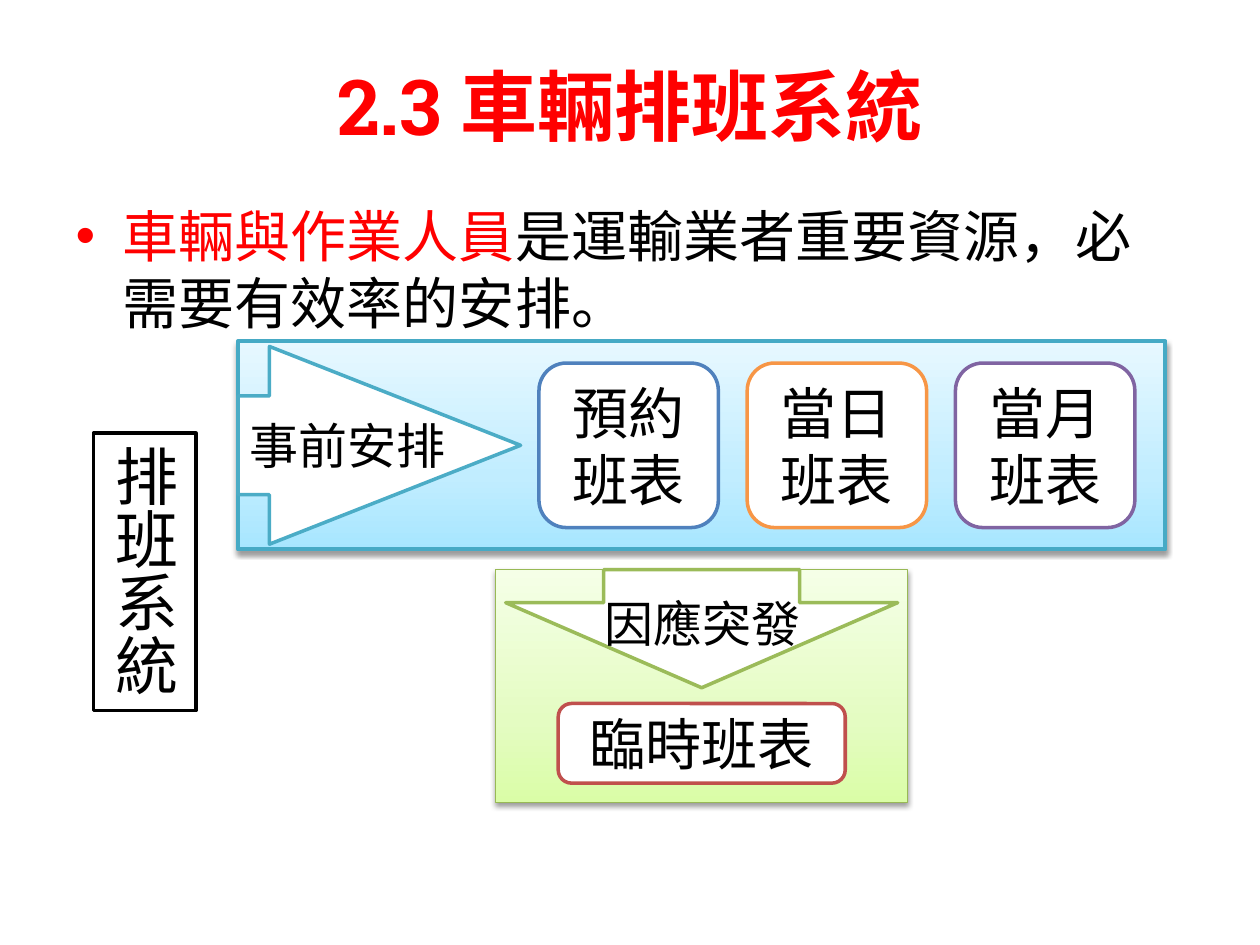
from dataclasses import dataclass

from lxml.etree import SubElement
from pptx import Presentation
from pptx.dml.color import RGBColor
from pptx.enum.shapes import MSO_SHAPE
from pptx.enum.text import MSO_ANCHOR, PP_ALIGN
from pptx.oxml import parse_xml
from pptx.oxml.ns import nsdecls, qn
from pptx.shapes.autoshape import Shape
from pptx.text.text import TextFrame
from pptx.util import Pt


@dataclass(frozen=True)
class Theme:
    font: str = "Roboto Slab"
    ink: str = "000000"
    paper: str = "FFFFFF"
    accent: str = "FF0000"
    blue: str = "4F81BD"
    orange: str = "F79646"
    purple: str = "8064A2"
    red: str = "C0504D"
    aqua: str = "4BACC6"
    green: str = "9BBB59"
    aqua_edge: str = "46AAC5"
    green_edge: str = "98B955"
    aqua_gradient: tuple = ("A7E6FF", "C1EDFF", "E7F8FF")
    green_gradient: tuple = ("DAFDA7", "E4FCC2", "F5FFE7")
    title_size: int = 44
    system_size: int = 36
    body_size: int = 32
    label_size: int = 28
    outline: float = 2


@dataclass(frozen=True)
class Box:
    left: float
    top: float
    width: float
    height: float

    def lengths(self) -> tuple:
        return Pt(self.left), Pt(self.top), Pt(self.width), Pt(self.height)


@dataclass(frozen=True)
class Card:
    box: Box
    lines: tuple
    color: str


THEME = Theme()
CARD_LEFT, CARD_PITCH = 308, 119
SCHEDULES = (("預約", THEME.blue), ("當日", THEME.orange), ("當月", THEME.purple))
ADVANCE_CARDS = [
    Card(Box(CARD_LEFT + index * CARD_PITCH, 207.5, 102.5, 94), (name, "班表"), color)
    for index, (name, color) in enumerate(SCHEDULES)
]
URGENT_CARD = Card(Box(319, 402, 164, 45.5), ("臨時班表",), THEME.red)


def place(shape, box: Box) -> None:
    shape.left, shape.top, shape.width, shape.height = box.lengths()


def write_lines(frame: TextFrame, lines: tuple, size: float, color: str = THEME.ink,
                align=PP_ALIGN.CENTER, bold: bool = False) -> None:
    frame.word_wrap = True
    for index, line in enumerate(lines):
        paragraph = frame.add_paragraph() if index else frame.paragraphs[0]
        paragraph.text = line
        paragraph.alignment = align
        paragraph.font.name = THEME.font
        paragraph.font.size = Pt(size)
        paragraph.font.bold = bold
        paragraph.font.color.rgb = RGBColor.from_string(color)


def add_outlined(shapes, kind: MSO_SHAPE, box: Box, color: str,
                 width: float = THEME.outline) -> Shape:
    shape = shapes.add_shape(kind, *box.lengths())
    shape.shadow.inherit = False
    shape.fill.solid()
    shape.fill.fore_color.rgb = RGBColor.from_string(THEME.paper)
    shape.line.color.rgb = RGBColor.from_string(color)
    shape.line.width = Pt(width)
    shape.text_frame.vertical_anchor = MSO_ANCHOR.MIDDLE
    return shape


def add_panel(shapes, box: Box, colors: tuple, edge: str, width: float) -> None:
    """Add a rectangle with an upward gradient and a soft shadow below it."""
    panel = add_outlined(shapes, MSO_SHAPE.RECTANGLE, box, edge, width)
    properties = panel.fill._xPr
    stops = "".join(
        f'<a:gs pos="{position}000"><a:srgbClr val="{color}"/></a:gs>'
        for position, color in zip((0, 35, 100), colors)
    )
    gradient = parse_xml(
        f'<a:gradFill {nsdecls("a")} rotWithShape="1"><a:gsLst>{stops}</a:gsLst>'
        '<a:lin ang="16200000" scaled="0"/></a:gradFill>'
    )
    properties.replace(properties.find(qn("a:solidFill")), gradient)
    shadow = SubElement(properties.find(qn("a:effectLst")), qn("a:outerShdw"),
                        blurRad=str(Pt(3.1)), dist=str(Pt(1.6)),
                        dir="5400000", rotWithShape="0")
    shade = SubElement(shadow, qn("a:srgbClr"), val=THEME.ink)
    SubElement(shade, qn("a:alpha"), val="38000")


def add_arrow(shapes, kind: MSO_SHAPE, box: Box, head: float, color: str) -> None:
    arrow = add_outlined(shapes, kind, box, color)
    arrow.adjustments[0] = 0.5
    arrow.adjustments[1] = head


def add_card(shapes, card: Card) -> None:
    shape = add_outlined(shapes, MSO_SHAPE.ROUNDED_RECTANGLE, card.box, card.color)
    write_lines(shape.text_frame, card.lines, THEME.body_size)


def add_label(shapes, box: Box, text: str, align) -> None:
    label = shapes.add_textbox(*box.lengths())
    write_lines(label.text_frame, (text,), THEME.label_size, align=align)


def fill_placeholders(slide) -> None:
    title, body = slide.placeholders
    place(title, Box(36, 15, 648, 90))
    title.text_frame.vertical_anchor = MSO_ANCHOR.MIDDLE
    write_lines(title.text_frame, ("2.3 車輛排班系統",), THEME.title_size,
                THEME.accent, bold=True)

    place(body, Box(36, 111.5, 648, 356.5))
    paragraph = body.text_frame.paragraphs[0]
    paragraph.space_before = Pt(0)
    paragraph.font.name = THEME.font
    paragraph.font.size = Pt(THEME.body_size)
    for text, color in (("車輛與作業人員", THEME.accent),
                        ("是運輸業者重要資源，必需要有效率的安排。", THEME.ink)):
        run = paragraph.add_run()
        run.text = text
        run.font.color.rgb = RGBColor.from_string(color)


def add_advance_group(slide) -> None:
    shapes = slide.shapes.add_group_shape().shapes
    add_panel(shapes, Box(136, 195, 530, 119), THEME.aqua_gradient, THEME.aqua_edge, 2.25)
    add_arrow(shapes, MSO_SHAPE.RIGHT_ARROW, Box(136, 198, 161.5, 113), 1.27, THEME.aqua)
    add_label(shapes, Box(135.5, 234, 142, 41), "事前安排", PP_ALIGN.LEFT)
    for card in ADVANCE_CARDS:
        add_card(shapes, card)


def add_urgent_group(slide) -> None:
    shapes = slide.shapes.add_group_shape().shapes
    add_panel(shapes, Box(283, 325.5, 235.5, 133), THEME.green_gradient,
              THEME.green_edge, 0.75)
    add_card(shapes, URGENT_CARD)
    add_arrow(shapes, MSO_SHAPE.DOWN_ARROW, Box(289, 325.5, 224, 67.5), 0.72, THEME.green)
    add_label(shapes, Box(310.5, 335.5, 181.5, 41), "因應突發", PP_ALIGN.CENTER)


def add_system_box(slide) -> None:
    shape = add_outlined(slide.shapes, MSO_SHAPE.RECTANGLE,
                         Box(53.5, 247.5, 58.5, 158.5), THEME.ink)
    write_lines(shape.text_frame, ("排班系統",), THEME.system_size)
    shape.text_frame._txBody.bodyPr.set("vert", "eaVert")


def main() -> None:
    presentation = Presentation()
    presentation.slide_width, presentation.slide_height = Pt(720), Pt(540)
    slide = presentation.slides.add_slide(presentation.slide_layouts[1])
    fill_placeholders(slide)
    add_advance_group(slide)
    add_urgent_group(slide)
    add_system_box(slide)
    presentation.save("out.pptx")


if __name__ == "__main__":
    main()
